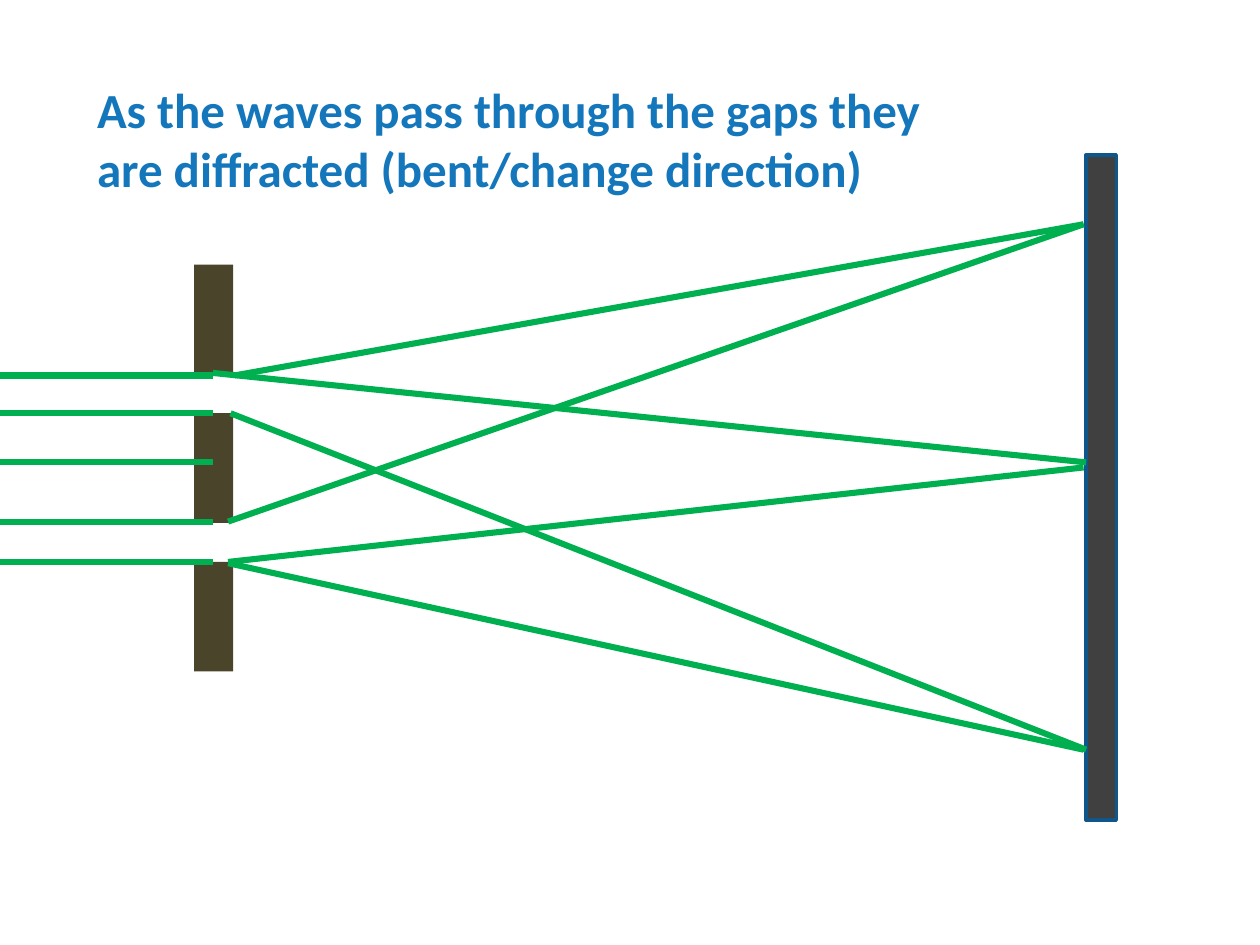
from dataclasses import dataclass
from typing import Any, Optional

from lxml.etree import SubElement
from pptx import Presentation
from pptx.dml.color import RGBColor
from pptx.enum.shapes import MSO_CONNECTOR, MSO_SHAPE
from pptx.enum.text import MSO_ANCHOR, MSO_AUTO_SIZE, PP_ALIGN
from pptx.oxml.ns import qn
from pptx.util import Inches, Pt

COLUMNS, ROWS = 100, 75


@dataclass(frozen=True)
class Theme:
    font: str = "Calibri"
    title: RGBColor = RGBColor(0x14, 0x76, 0xBB)
    barrier: RGBColor = RGBColor(0x4A, 0x45, 0x2A)
    screen: RGBColor = RGBColor(0x40, 0x40, 0x40)
    screen_edge: RGBColor = RGBColor(0x0F, 0x57, 0x8A)
    ray: RGBColor = RGBColor(0x00, 0xB0, 0x50)
    title_size: float = 28
    edge_width: float = 2
    ray_width: float = 3.5


@dataclass(frozen=True)
class Block:
    col: float
    row: float
    cols: float
    rows: float
    fill: RGBColor
    edge: Optional[RGBColor] = None


@dataclass(frozen=True)
class Ray:
    col: float
    row: float
    end_col: float
    end_row: float


THEME = Theme()
prs = Presentation()
prs.slide_width, prs.slide_height = Inches(10), Inches(7.5)


def x(cols: float) -> int:
    return round(prs.slide_width * cols / COLUMNS)


def y(rows: float) -> int:
    return round(prs.slide_height * rows / ROWS)


def apply(target: Any, values: dict[str, Any]) -> None:
    for name, value in values.items():
        setattr(target, name, value)


def draw_title(s: Any, text: str) -> None:
    sp = s.shapes.title
    apply(sp, {"left": x(6.7), "top": y(5.8), "width": x(67.7), "height": y(10.4)})
    tf = sp.text_frame
    tf.text = text
    apply(tf, {"word_wrap": True, "auto_size": MSO_AUTO_SIZE.SHAPE_TO_FIT_TEXT,
               "vertical_anchor": MSO_ANCHOR.TOP})
    p = tf.paragraphs[0]
    p.alignment = PP_ALIGN.LEFT
    r = p.runs[0]
    apply(r.font, {"name": THEME.font, "size": Pt(THEME.title_size), "bold": True})
    r.font.color.rgb = THEME.title


def draw_block(s: Any, block: Block) -> None:
    sp = s.shapes.add_shape(MSO_SHAPE.RECTANGLE, x(block.col), y(block.row),
                            x(block.cols), y(block.rows))
    sp.shadow.inherit = False
    sp.fill.solid()
    sp.fill.fore_color.rgb = block.fill
    if block.edge is None:
        sp.line.fill.background()
    else:
        sp.line.color.rgb = block.edge
        sp.line.width = Pt(THEME.edge_width)


def draw_ray(s: Any, ray: Ray) -> None:
    cxn = s.shapes.add_connector(MSO_CONNECTOR.STRAIGHT, x(ray.col), y(ray.row),
                                 x(ray.end_col), y(ray.end_row))
    cxn.line.color.rgb = THEME.ray
    cxn.line.width = Pt(THEME.ray_width)
    SubElement(cxn._element.spPr, qn("a:effectLst"))


BARRIERS = [Block(15.4, 21 + 11.8 * i, 3.1, 8.7, THEME.barrier) for i in range(3)]
SCREEN = Block(86.2, 12.3, 2.4, 52.8, THEME.screen, THEME.screen_edge)
INCOMING = [Ray(0, row, 16.9, row) for row in (29.8, 32.8, 36.7, 41.4, 44.6)]
DIFFRACTED = [
    Ray(16.9, 29.6, 86.2, 36.7),
    Ray(18.1, 44.6, 86, 37.1),
    Ray(18.1, 44.7, 86, 59.5),
    Ray(18.3, 32.8, 86.2, 59.5),
    Ray(18.6, 29.8, 86, 17.8),
    Ray(18.1, 41.4, 86, 17.8),
]


def main() -> None:
    s = prs.slides.add_slide(prs.slide_layouts.get_by_name("Title Only"))
    draw_title(s, "As the waves pass through the gaps they are diffracted "
                  "(bent/change direction)")
    for block in [*BARRIERS, SCREEN]:
        draw_block(s, block)
    for ray in INCOMING + DIFFRACTED:
        draw_ray(s, ray)
    prs.save("out.pptx")


if __name__ == "__main__":
    main()
